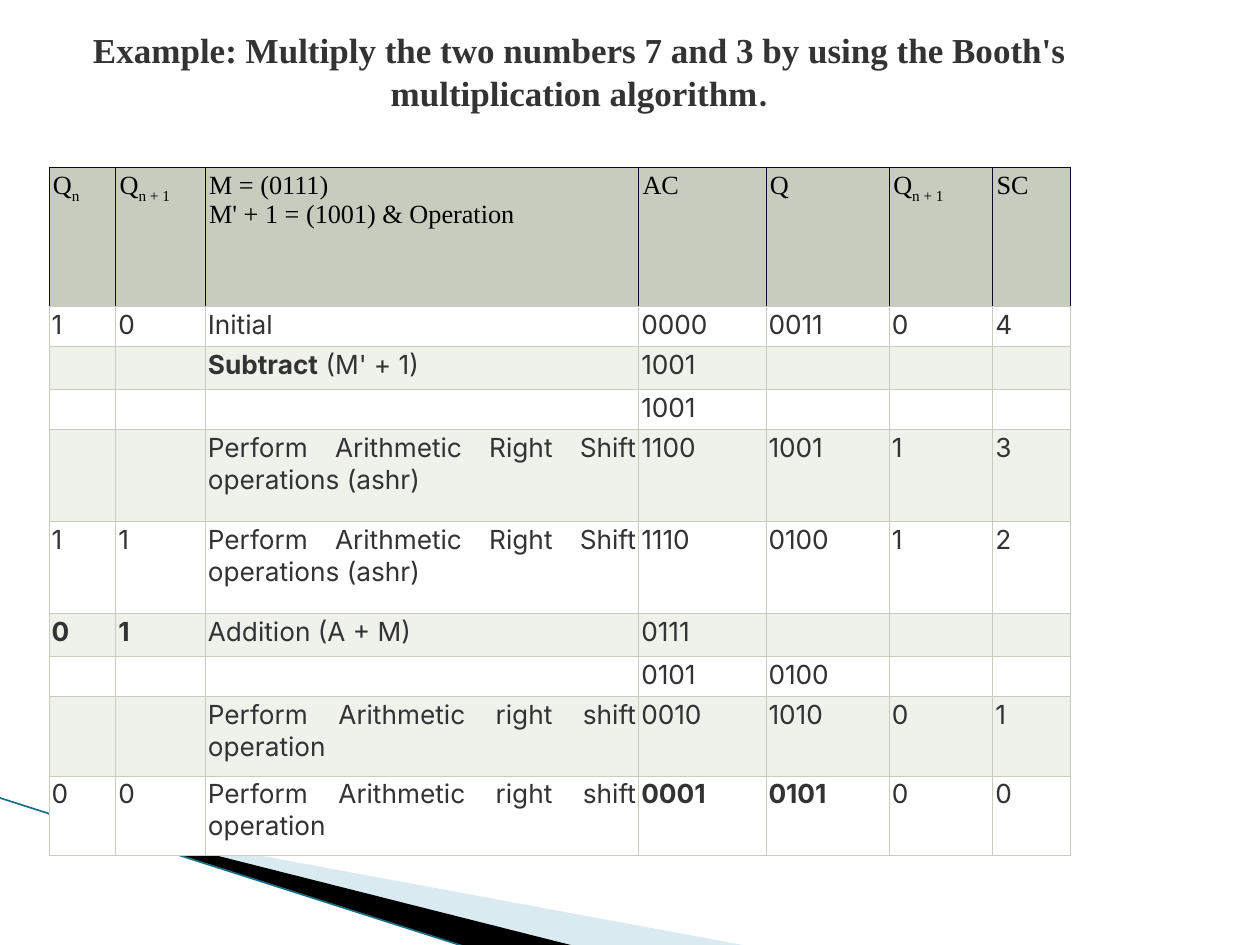
from lxml.etree import SubElement
from pptx import Presentation
from pptx.dml.color import RGBColor
from pptx.enum.shapes import MSO_CONNECTOR
from pptx.enum.text import MSO_ANCHOR, MSO_AUTO_SIZE, PP_ALIGN
from pptx.oxml import parse_xml
from pptx.oxml.ns import nsdecls, qn
from pptx.util import Inches, Pt

SERIF, SANS = "Times New Roman", "Inter"
TEXT, BLACK, WHITE = "333333", "000000", "FFFFFF"
SAGE, PALE_SAGE, NAVY = "C7CCBE", "EFF1EB", "10052A"
PALE_BLUE, TEAL = "A0CBDC", "1A6E84"
CELL_SIZE = 15

COLUMN_WIDTHS = [0.53, 0.71, 3.44, 1.01, 0.98, 0.82, 0.62]
ROW_HEIGHTS = [1.1, 0.32, 0.34, 0.32, 0.73, 0.73, 0.34, 0.32, 0.63, 0.63]

# A bar starts a second run: a subscript in the header, regular text below it
SHIFT_LONG = "Perform Arithmetic Right Shift operations (ashr)"
SHIFT_SHORT = "Perform Arithmetic right shift operation"
ROWS = [
    ["Q|n", "Q|n + 1", "M = (0111)\nM' + 1 = (1001) & Operation", "AC", "Q", "Q|n + 1", "SC"],
    ["1", "0", "Initial", "0000", "0011", "0", "4"],
    ["", "", "Subtract| (M' + 1)", "1001", "", "", ""],
    ["", "", "", "1001", "", "", ""],
    ["", "", SHIFT_LONG, "1100", "1001", "1", "3"],
    ["1", "1", SHIFT_LONG, "1110", "0100", "1", "2"],
    ["0", "1", "Addition (A + M)", "0111", "", "", ""],
    ["", "", "", "0101", "0100", "", ""],
    ["", "", SHIFT_SHORT, "0010", "1010", "0", "1"],
    ["0", "0", SHIFT_SHORT, "0001", "0101", "0", "0"],
]
BOLD_CELLS = {(2, 2), (6, 0), (6, 1), (9, 3), (9, 4)}


def color(hex_string):
    return RGBColor.from_string(hex_string)


def format_run(run, font_name, size, hex_color, bold=False):
    run.font.name = font_name
    run.font.size = Pt(size)
    run.font.bold = bold
    run.font.color.rgb = color(hex_color)


def set_frame(shape, frame):
    """Give a freeform another frame while its outline stays in place."""
    left, top, width, height = [Inches(value) for value in frame]
    outline = next(shape._element.iter(qn("a:path")))
    for point in outline.iter(qn("a:pt")):
        point.set("x", str(int(point.get("x")) + shape.left - left))
        point.set("y", str(int(point.get("y")) + shape.top - top))
    outline.set("w", str(width))
    outline.set("h", str(height))
    shape.left, shape.top, shape.width, shape.height = left, top, width, height


def add_band(slide, points, frame, fill, opacity=None):
    corners = [(Inches(x), Inches(y)) for x, y in points]
    builder = slide.shapes.build_freeform(*corners[0])
    builder.add_line_segments(corners[1:])
    shape = builder.convert_to_shape()
    set_frame(shape, frame)
    shape.shadow.inherit = False
    shape.line.fill.background()
    shape.fill.solid()
    shape.fill.fore_color.rgb = color(fill)
    if opacity is not None:
        fill_color = shape.fill._xPr.find(qn("a:solidFill"))[0]
        SubElement(fill_color, qn("a:alpha"), val=str(opacity * 1000))


def add_line(slide, start, end, hex_color, width):
    ends = [Inches(value) for value in (*start, *end)]
    connector = slide.shapes.add_connector(MSO_CONNECTOR.STRAIGHT, *ends)
    connector.line.color.rgb = color(hex_color)
    connector.line.width = Pt(width)
    SubElement(connector._element.spPr, qn("a:effectLst"))


def fill_title(slide):
    title = slide.shapes.title
    title.left, title.top = Inches(0.18), Inches(0.18)
    title.width, title.height = Inches(8.84), Inches(0.77)
    text_frame = title.text_frame
    text_frame.text = ("Example: Multiply the two numbers 7 and 3 by using "
                       "the Booth's multiplication algorithm")
    text_frame.word_wrap = True
    text_frame.auto_size = MSO_AUTO_SIZE.SHAPE_TO_FIT_TEXT
    text_frame.vertical_anchor = MSO_ANCHOR.TOP
    paragraph = text_frame.paragraphs[0]
    paragraph.alignment = PP_ALIGN.CENTER
    format_run(paragraph.runs[0], SERIF, 20, TEXT, bold=True)
    period = paragraph.add_run()
    period.text = "."
    format_run(period, SANS, 18, TEXT, bold=True)


def set_borders(cell, sides):
    """Draw the left, right, top and bottom borders, in that order."""
    properties = cell._tc.get_or_add_tcPr()
    for index, (side, hex_color) in enumerate(zip("LRTB", sides)):
        properties.insert(index, parse_xml(
            f'<a:ln{side} {nsdecls("a")} w="{Pt(0.6)}"><a:solidFill>'
            f'<a:srgbClr val="{hex_color}"/></a:solidFill></a:ln{side}>'))


def fill_cell(cell, text, is_header, is_bold, fill):
    margin = Inches(0.03 if is_header else 0.02)
    cell.margin_left = cell.margin_right = margin
    cell.margin_top = cell.margin_bottom = margin
    cell.fill.solid()
    cell.fill.fore_color.rgb = color(fill)
    set_borders(cell, [NAVY] * 3 + [SAGE] if is_header else [SAGE] * 4)

    paragraph = cell.text_frame.paragraphs[0]
    if not text:
        # Keeps empty rows as low as the filled ones
        SubElement(paragraph._p, qn("a:endParaRPr"), sz=str(CELL_SIZE * 100))
        return
    lead, _, tail = text.partition("|")
    paragraph.text = lead
    if not is_header:
        paragraph.alignment = PP_ALIGN.JUSTIFY
    style = (SERIF, CELL_SIZE, BLACK) if is_header else (SANS, CELL_SIZE, TEXT)
    for run in paragraph.runs:
        format_run(run, *style, bold=is_bold)
    for line_break in paragraph._p.findall(qn("a:br")):
        SubElement(line_break, qn("a:rPr"), sz=str(CELL_SIZE * 100))
    if tail:
        run = paragraph.add_run()
        run.text = tail
        format_run(run, *style)
        if is_header:
            run.font._element.set("baseline", "-25000")


def add_steps_table(slide):
    frame = slide.shapes.add_table(
        len(ROWS), len(COLUMN_WIDTHS), Inches(0.39), Inches(1.33),
        Inches(sum(COLUMN_WIDTHS)), Inches(sum(ROW_HEIGHTS)))
    table = frame.table
    table.first_row = table.horz_banding = False
    for column, width in zip(table.columns, COLUMN_WIDTHS):
        column.width = Inches(width)
    for row, height in zip(table.rows, ROW_HEIGHTS):
        row.height = Inches(height)
    for row_index, texts in enumerate(ROWS):
        is_header = row_index == 0
        fill = SAGE if is_header else (PALE_SAGE, WHITE)[row_index % 2]
        for column_index, text in enumerate(texts):
            position = (row_index, column_index)
            fill_cell(table.cell(*position), text, is_header,
                      position in BOLD_CELLS, fill)


def main():
    presentation = Presentation()
    presentation.slide_width, presentation.slide_height = Inches(10), Inches(7.5)
    slide = presentation.slides.add_slide(presentation.slide_layouts[5])

    # Decorative bands in the lower left corner
    add_band(slide, [(0.55, 6.51), (5.95, 7.51), (4.56, 7.51), (0.55, 6.5)],
             (0.78, 5.47, 4.16, 1.58), PALE_BLUE, 40)
    add_band(slide, [(0.53, 6.49), (4.57, 7.51), (3.72, 7.52), (0.54, 6.5)],
             (-0.06, 6.33, 4.16, 0.92), BLACK)
    add_line(slide, (-0.01, 6.33), (3.71, 7.52), TEAL, 0.95)

    # Content
    fill_title(slide)
    add_steps_table(slide)
    presentation.save("out.pptx")


if __name__ == "__main__":
    main()
